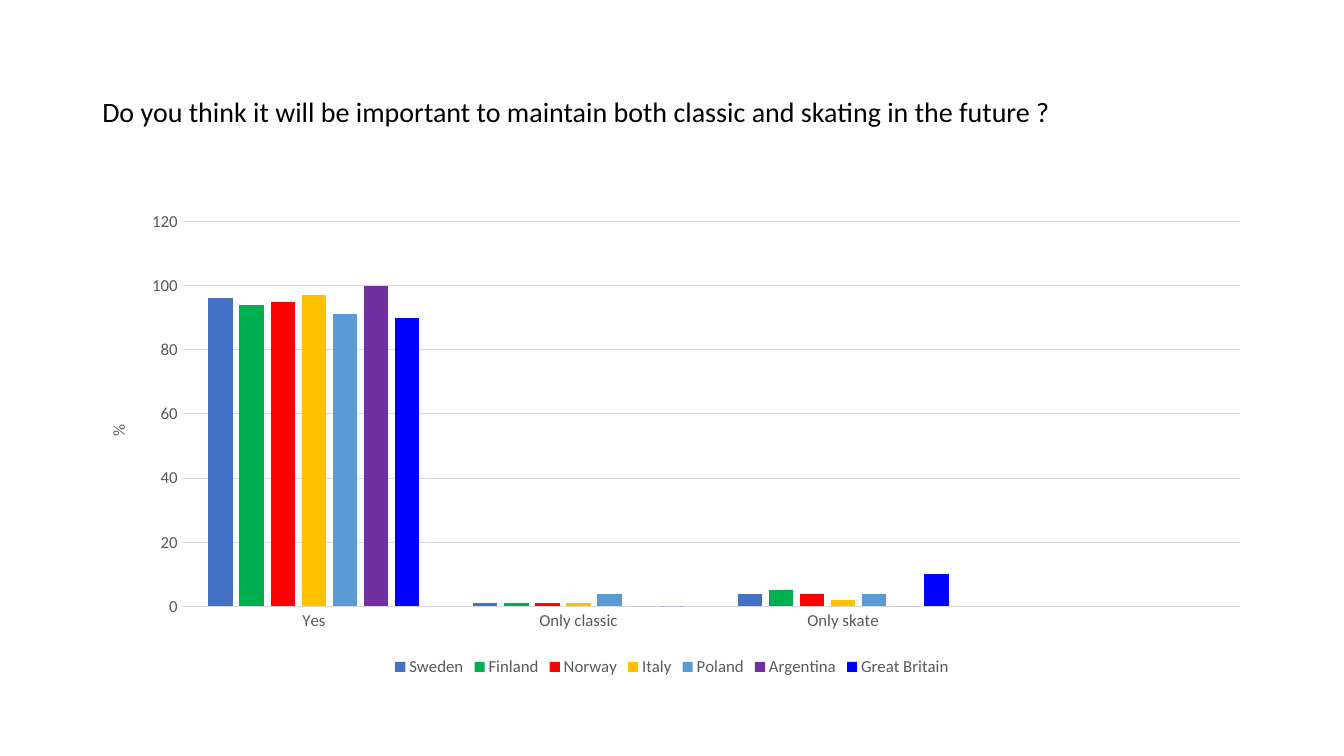
from lxml.etree import SubElement as Sub
from pptx import Presentation
from pptx.chart.data import CategoryChartData as Data
from pptx.dml.color import RGBColor as RGB
from pptx.enum.chart import XL_CHART_TYPE as Kind, XL_LEGEND_POSITION as Spot
from pptx.enum.chart import XL_TICK_MARK as Tick
from pptx.enum.text import MSO_ANCHOR as Anchor
from pptx.oxml.ns import qn
from pptx.util import Pt

BLACK = RGB(0, 0, 0)
GREY = RGB(0x59, 0x59, 0x59)
PALE = RGB(0xD9, 0xD9, 0xD9)
FACE = "Calibri"
TITLE = "Do you think it will be important to maintain both classic and skating in the future ?"
CATS = ["Yes", "Only classic", "Only skate", ""]
LANDS = [
    ("Sweden", (96, 1, 4, None), RGB(0x44, 0x72, 0xC4)),
    ("Finland", (94, 1, 5, None), RGB(0x00, 0xB0, 0x50)),
    ("Norway", (95, 1, 4, None), RGB(0xFF, 0x00, 0x00)),
    ("Italy", (97, 1, 2, None), RGB(0xFF, 0xC0, 0x00)),
    ("Poland", (91, 4, 4, None), RGB(0x5B, 0x9B, 0xD5)),
    ("Argentina", (100, 0, 0, None), RGB(0x70, 0x30, 0xA0)),
    ("Great Britain", (90, 0, 10, None), RGB(0x00, 0x00, 0xFF)),
]


def style(font, size, color):
    font.name = FACE
    font.size = Pt(size)
    font.bold = False
    font.color.rgb = color


def rule(line):
    line.color.rgb = PALE
    line.width = Pt(0.75)


def place(node, index, **parts):
    for old in node.findall(qn("c:layout")):
        node.remove(old)
    layout = node.makeelement(qn("c:layout"), {})
    node.insert(index, layout)
    manual = Sub(layout, qn("c:manualLayout"))
    for tag, value in parts.items():
        Sub(manual, qn("c:" + tag)).set("val", str(value))


def add_title(slide, left, top, width, height):
    box = slide.shapes.add_textbox(Pt(left), Pt(top), Pt(width), Pt(height))
    frame = box.text_frame
    frame.word_wrap = True
    frame.vertical_anchor = Anchor.MIDDLE
    frame.text = TITLE
    para = frame.paragraphs[0]
    para.line_spacing = 0.9
    style(para.runs[0].font, 20, BLACK)


def set_axes(chart):
    cat, val = chart.category_axis, chart.value_axis
    for axis in (cat, val):
        axis.major_tick_mark = axis.minor_tick_mark = Tick.NONE
        style(axis.tick_labels.font, 12, GREY)
    rule(cat.format.line)
    val.format.line.fill.background()
    val.minimum_scale, val.maximum_scale, val.major_unit = 0, 120, 20
    val.has_major_gridlines = True
    rule(val.major_gridlines.format.line)
    title = val.axis_title
    title.text_frame.text = "%"
    style(title.text_frame.paragraphs[0].runs[0].font, 12, GREY)
    place(title._element, 1, xMode="edge", yMode="edge", x=0.01, y=0.46)


def add_chart(slide, left, top, width, height):
    data = Data()
    data.categories = CATS
    for name, values, _ in LANDS:
        data.add_series(name, values)
    chart = slide.shapes.add_chart(
        Kind.COLUMN_CLUSTERED, Pt(left), Pt(top), Pt(width), Pt(height), data
    ).chart
    style(chart.font, 10, BLACK)
    chart.has_title = False
    plot = chart.plots[0]
    plot.gap_width = 219
    plot.overlap = -27
    plot.vary_by_categories = False
    for bars, (_, _, color) in zip(plot.series, LANDS):
        bars.format.fill.solid()
        bars.format.fill.fore_color.rgb = color
        bars.invert_if_negative = False
    set_axes(chart)
    chart.has_legend = True
    chart.legend.position = Spot.BOTTOM
    chart.legend.include_in_layout = False
    style(chart.legend.font, 12, GREY)
    area = chart._chartSpace.find(".//" + qn("c:plotArea"))
    place(area, 0, layoutTarget="inner", xMode="edge", yMode="edge",
          x=0.077, y=0.042, w=0.913, h=0.803)


def main():
    deck = Presentation()
    deck.slide_width, deck.slide_height = Pt(960), Pt(540)
    slide = deck.slides.add_slide(deck.slide_layouts[6])
    add_title(slide, 66, 28.75, 828, 104.4)
    add_chart(slide, 66, 143.75, 828, 342.6)
    deck.save("out.pptx")


if __name__ == "__main__":
    main()
